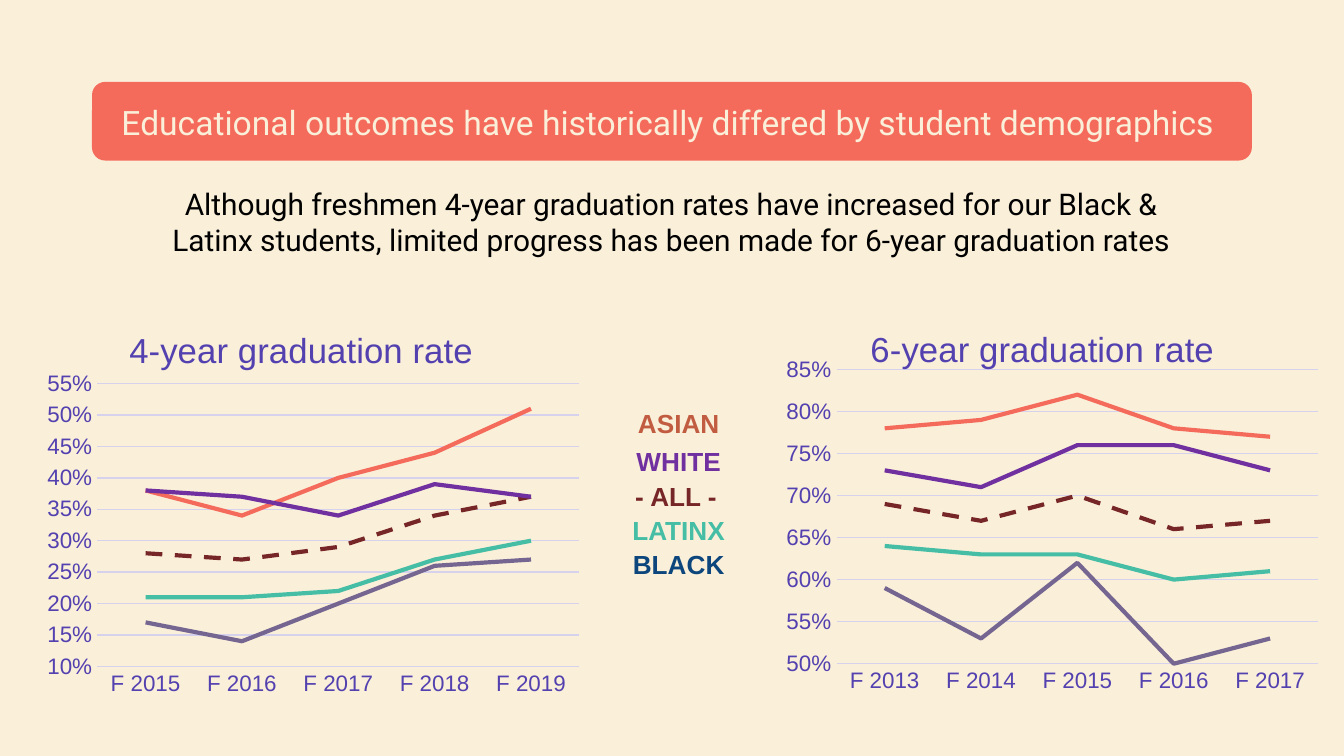
from dataclasses import dataclass

from lxml import etree
from pptx import Presentation
from pptx.chart.data import CategoryChartData
from pptx.dml.color import RGBColor
from pptx.enum.chart import XL_CHART_TYPE, XL_TICK_MARK
from pptx.enum.dml import MSO_LINE
from pptx.enum.shapes import MSO_SHAPE
from pptx.enum.text import MSO_ANCHOR, PP_ALIGN
from pptx.oxml.ns import qn
from pptx.util import Pt

SCALE = 4572  # EMU per px, 200 px to the inch
LINE = XL_CHART_TYPE.LINE
NO_TICK = XL_TICK_MARK.NONE
DASH = MSO_LINE.DASH
ROUND = MSO_SHAPE.ROUNDED_RECTANGLE
TOP, MIDDLE = MSO_ANCHOR.TOP, MSO_ANCHOR.MIDDLE
CENTER = PP_ALIGN.CENTER


@dataclass(frozen=True)
class Theme:
    back: str = "FAEFD9"
    coral: str = "F46B5C"
    ink: str = "000000"
    axis: str = "5341B0"
    grid: str = "D6D2EE"
    rust: str = "C15C41"
    violet: str = "7030A0"
    maroon: str = "762627"
    teal: str = "45BEA5"
    mauve: str = "756591"
    navy: str = "0C467C"
    head: str = "Roboto"
    body: str = "Arial"
    title_pt: float = 18
    lead_pt: float = 16
    key_pt: float = 14
    chart_pt: float = 18.6
    axis_pt: float = 12
    line_pt: float = 2.25
    grid_pt: float = 0.75


@dataclass(frozen=True)
class Box:
    left: int
    top: int
    width: int
    height: int

    def emu(self) -> tuple:
        return tuple(n * SCALE for n in (self.left, self.top, self.width, self.height))


@dataclass(frozen=True)
class Label:
    text: str
    box: Box
    color: str
    size: float
    font: str
    bold: bool = False
    anchor: MSO_ANCHOR = TOP


@dataclass(frozen=True)
class Rates:
    """One chart; the plot box is measured from the corner of the chart."""
    title: str
    box: Box
    plot: Box
    first: int
    low: float
    high: float
    rows: tuple


T = Theme()
# Order of the rows: all, Asian, Black, Latinx, white
HUES = (T.maroon, T.coral, T.mauve, T.teal, T.violet)
HEAD = {"x": 179, "y": 24}  # chart title, from the corner of the chart

LABELS = (
    Label("Educational outcomes have historically differed by student demographics",
          Box(102, 118, 1784, 126), T.back, T.title_pt, T.head, anchor=MIDDLE),
    Label("Although freshmen 4-year graduation rates have increased for our Black & "
          "Latinx students, limited progress has been made for 6-year graduation rates",
          Box(194, 267, 1610, 128), T.ink, T.lead_pt, T.head),
)

KEYS = (
    ("ASIAN", 893, 596, T.rust),
    ("WHITE", 893, 653, T.violet),
    ("- ALL -", 889, 705, T.maroon),
    ("LATINX", 893, 756, T.teal),
    ("BLACK", 893, 806, T.navy),
)

CHARTS = (
    Rates("4-year graduation rate", Box(4, 454, 888, 668),
          Box(141, 117, 717, 421), 2015, 0.1, 0.55,
          ((0.28, 0.27, 0.29, 0.34, 0.37),
           (0.38, 0.34, 0.40, 0.44, 0.51),
           (0.17, 0.14, 0.20, 0.26, 0.27),
           (0.21, 0.21, 0.22, 0.27, 0.30),
           (0.38, 0.37, 0.34, 0.39, 0.37))),
    Rates("6-year graduation rate", Box(1107, 452, 888, 668),
          Box(138, 98, 717, 438), 2013, 0.5, 0.85,
          ((0.69, 0.67, 0.70, 0.66, 0.67),
           (0.78, 0.79, 0.82, 0.78, 0.77),
           (0.59, 0.53, 0.62, 0.50, 0.53),
           (0.64, 0.63, 0.63, 0.60, 0.61),
           (0.73, 0.71, 0.76, 0.76, 0.73))),
)


def rgb(color: str) -> RGBColor:
    return RGBColor.from_string(color)


def style(font, size: float, color: str, name: str, bold: bool = False) -> None:
    font.size, font.name, font.bold = Pt(size), name, bold
    font.color.rgb = rgb(color)


def stroke(line, color: str, width: float) -> None:
    line.color.rgb = rgb(color)
    line.width = Pt(width)


def banner(slide, box: Box) -> None:
    shape = slide.shapes.add_shape(ROUND, *box.emu())
    shape.shadow.inherit = False
    shape.fill.solid()
    shape.fill.fore_color.rgb = rgb(T.coral)
    shape.line.fill.background()


def write(slide, label: Label) -> None:
    frame = slide.shapes.add_textbox(*label.box.emu()).text_frame
    frame.word_wrap = True
    frame.vertical_anchor = label.anchor
    frame.text = label.text
    para = frame.paragraphs[0]
    para.alignment = CENTER
    style(para.runs[0].font, label.size, label.color, label.font, label.bold)


def place(node, index: int, modes: dict, spots: dict, box: Box) -> None:
    """Give a chart part a manual layout, as fractions of the chart's box."""
    for old in node.findall(qn("c:layout")):
        node.remove(old)
    layout = etree.Element(qn("c:layout"))
    manual = etree.SubElement(layout, qn("c:manualLayout"))
    whole = {"x": box.width, "w": box.width, "y": box.height, "h": box.height}
    parts = {tag: f"{px / whole[tag]:.4f}" for tag, px in spots.items()}
    for tag, value in (modes | parts).items():
        etree.SubElement(manual, qn("c:" + tag)).set("val", value)
    node.insert(index, layout)


def draw(slide, rates: Rates) -> None:
    data = CategoryChartData(number_format="0%")
    data.categories = [f"F {rates.first + n}" for n in range(len(rates.rows[0]))]
    for n, row in enumerate(rates.rows, 1):
        data.add_series(f"Series {n}", row)
    chart = slide.shapes.add_chart(LINE, *rates.box.emu(), data).chart
    style(chart.font, T.axis_pt, T.axis, T.body)
    chart.has_legend = False
    chart.plots[0].vary_by_categories = False

    chart.has_title = True
    chart.chart_title.include_in_layout = False
    frame = chart.chart_title.text_frame
    frame.text = rates.title
    style(frame.paragraphs[0].runs[0].font, T.chart_pt, T.axis, T.body)

    edge = {"xMode": "edge", "yMode": "edge"}
    plot = rates.plot
    spots = {"x": plot.left, "y": plot.top, "w": plot.width, "h": plot.height}
    root = chart.element.find(qn("c:chart"))
    place(root.find(qn("c:title")), 1, edge, HEAD, rates.box)
    place(root.find(qn("c:plotArea")), 0, {"layoutTarget": "inner"} | edge, spots, rates.box)

    cats, vals = chart.category_axis, chart.value_axis
    for axis in (cats, vals):
        axis.major_tick_mark = axis.minor_tick_mark = NO_TICK
        style(axis.tick_labels.font, T.axis_pt, T.axis, T.body)
    stroke(cats.format.line, T.grid, T.grid_pt)
    vals.format.line.fill.background()
    vals.minimum_scale, vals.maximum_scale = rates.low, rates.high
    vals.major_unit = 0.05
    vals.tick_labels.number_format = "0%"
    vals.tick_labels.number_format_is_linked = False
    vals.has_major_gridlines = True
    stroke(vals.major_gridlines.format.line, T.grid, T.grid_pt)

    for series, hue in zip(chart.series, HUES):
        series.smooth = False
        stroke(series.format.line, hue, T.line_pt)
    chart.series[0].format.line.dash_style = DASH


def main() -> None:
    deck = Presentation()
    deck.slide_width, deck.slide_height = 2000 * SCALE, 1125 * SCALE
    slide = deck.slides.add_slide(deck.slide_layouts[6])
    slide.background.fill.solid()
    slide.background.fill.fore_color.rgb = rgb(T.back)
    banner(slide, Box(137, 122, 1726, 117))
    for label in LABELS:
        write(slide, label)
    for rates in CHARTS:
        draw(slide, rates)
    for text, left, top, color in KEYS:
        write(slide, Label(text, Box(left, top, 234, 68), color, T.key_pt, T.body, True))
    deck.save("out.pptx")


if __name__ == "__main__":
    main()
